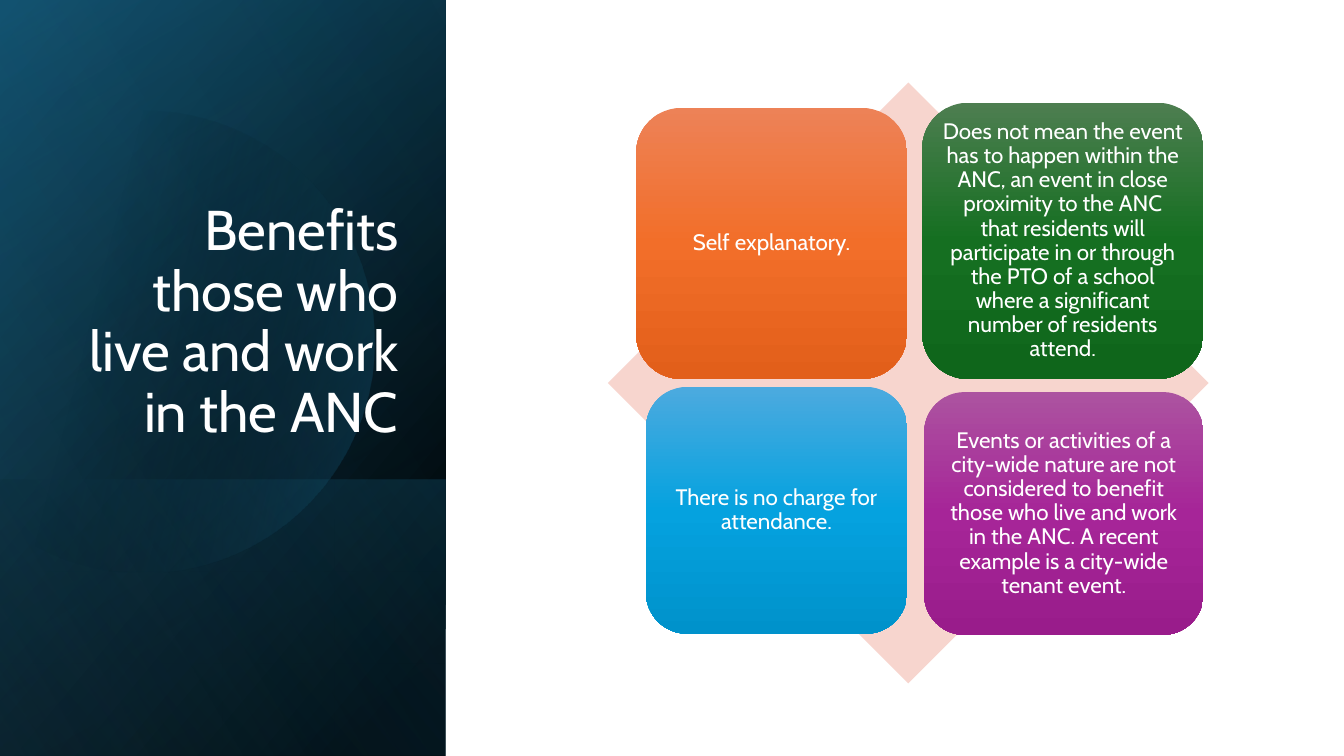
from math import acos, cos, sin

from lxml import etree
from pptx import Presentation
from pptx.dml.color import RGBColor
from pptx.enum.shapes import MSO_SHAPE
from pptx.enum.text import MSO_ANCHOR, PP_ALIGN
from pptx.oxml.ns import qn
from pptx.util import Cm, Pt

RECT, ROUND, GEM = MSO_SHAPE.RECTANGLE, MSO_SHAPE.ROUNDED_RECTANGLE, MSO_SHAPE.DIAMOND
MID, BOTTOM = MSO_ANCHOR.MIDDLE, MSO_ANCHOR.BOTTOM
CENTER, RIGHT = PP_ALIGN.CENTER, PP_ALIGN.RIGHT


def color(code):
    return RGBColor.from_string(code)


def assign(item, values):
    for key, value in values.items():
        setattr(item, key, value)


class Deck:
    font = "Cabin"
    ink = "FFFFFF"
    pad = Cm(0.18)

    def __init__(self):
        self.prs = Presentation()
        assign(self.prs, {"slide_width": Cm(33.87), "slide_height": Cm(19.05)})
        self.slide = self.prs.slides.add_slide(self.prs.slide_layouts[6])

    def plain(self, shape):
        shape.shadow.inherit = False
        shape.line.fill.background()
        return shape

    def shape(self, kind, box):
        return self.plain(self.slide.shapes.add_shape(kind, *map(Cm, box)))

    def solid(self, kind, box, code):
        shape = self.shape(kind, box)
        shape.fill.solid()
        shape.fill.fore_color.rgb = color(code)

    def blend(self, shape, stops, angle):
        """Fill with (position, colour, opacity) stops, angle clockwise."""
        shape.fill.background()
        old = shape.element.spPr.find(qn("a:noFill"))
        grad = etree.Element(qn("a:gradFill"), rotWithShape="1")
        group = etree.SubElement(grad, qn("a:gsLst"))
        for pos, code, alpha in stops:
            stop = etree.SubElement(group, qn("a:gs"), pos=str(pos * 1000))
            rgb = etree.SubElement(stop, qn("a:srgbClr"), val=code)
            if alpha < 100:
                etree.SubElement(rgb, qn("a:alpha"), val=str(alpha * 1000))
        etree.SubElement(grad, qn("a:lin"), ang=str(angle * 60000), scaled="0")
        old.getparent().replace(old, grad)

    def panel(self, box, stops, angle):
        self.blend(self.shape(RECT, box), stops, angle)

    def disc(self, x, y, r, stops, angle):
        """Draw a disc cut off at the left edge of the slide."""
        edge = acos(-x / r)
        turns = [edge * (i / 60 - 1) for i in range(121)]
        dots = [(Cm(max(0, x + r * cos(t))), Cm(y + r * sin(t))) for t in turns]
        form = self.slide.shapes.build_freeform(*dots[0], scale=1.0)
        form.add_line_segments(dots[1:], close=True)
        self.blend(self.plain(form.convert_to_shape()), stops, angle)

    def label(self, shape, text, size, align, anchor):
        frame = shape.text_frame
        assign(frame, {"word_wrap": True, "vertical_anchor": anchor})
        para = frame.paragraphs[0]
        assign(para, {"text": text, "alignment": align, "line_spacing": 0.9})
        font = para.runs[0].font
        assign(font, {"name": self.font, "size": Pt(size)})
        font.color.rgb = color(self.ink)
        return frame

    def title(self, box, text):
        shape = self.slide.shapes.add_textbox(*map(Cm, box))
        self.label(shape, text, 40, RIGHT, BOTTOM)

    def card(self, box, codes, text):
        shape = self.shape(ROUND, box)
        self.blend(shape, [(i * 50, code, 100) for i, code in enumerate(codes)], 90)
        frame = self.label(shape, text, 16, CENTER, MID)
        sides = ("left", "top", "right", "bottom")
        assign(frame, {f"margin_{side}": self.pad for side in sides})


CARDS = [
    ((16.03, 2.72, 6.83, 6.83), ("ED8257", "F26E29", "E25F1A"),
     "Self explanatory."),
    ((23.24, 2.59, 7.09, 6.96), ("4D7E50", "156F21", "0F661B"),
     "Does not mean the event has to happen within the ANC, an event in close "
     "proximity to the ANC that residents will participate in or through the PTO "
     "of a school where a significant number of residents attend."),
    ((16.28, 9.75, 6.58, 6.22), ("4CAADF", "05A2DF", "0092CB"),
     "There is no charge for attendance."),
    ((23.29, 9.88, 7.04, 6.12), ("AC53A0", "A62598", "991C8B"),
     "Events or activities of a city-wide nature are not considered to benefit "
     "those who live and work in the ANC. A recent example is a city-wide tenant "
     "event."),
]


def main():
    deck = Deck()

    # Dark side panel, built from layered gradients
    side = (0, 0, 11.23, 19.05)
    deck.panel(side, [(8, "000000", 100), (100, "104862", 100)], 220)
    deck.panel(side, [(0, "000000", 0), (99, "156082", 46)], 240)
    deck.panel((0, 12.09, 11.23, 6.96),
               [(2, "156082", 29), (100, "000000", 30)], 140)
    deck.disc(3.62, 8.6, 5.82, [(29, "000000", 0), (100, "156082", 43)], 14)
    deck.panel(side, [(0, "000000", 0), (99, "46B1E1", 11)], 150)

    # Title
    deck.title((1.63, 4.67, 8.66, 6.65),
               "Benefits those who live and work in the ANC")

    # Diamond with four cards
    deck.solid(GEM, (15.32, 2.08, 15.14, 15.14), "F7D5CE")
    for box, codes, text in CARDS:
        deck.card(box, codes, text)

    deck.prs.save("out.pptx")


if __name__ == "__main__":
    main()
